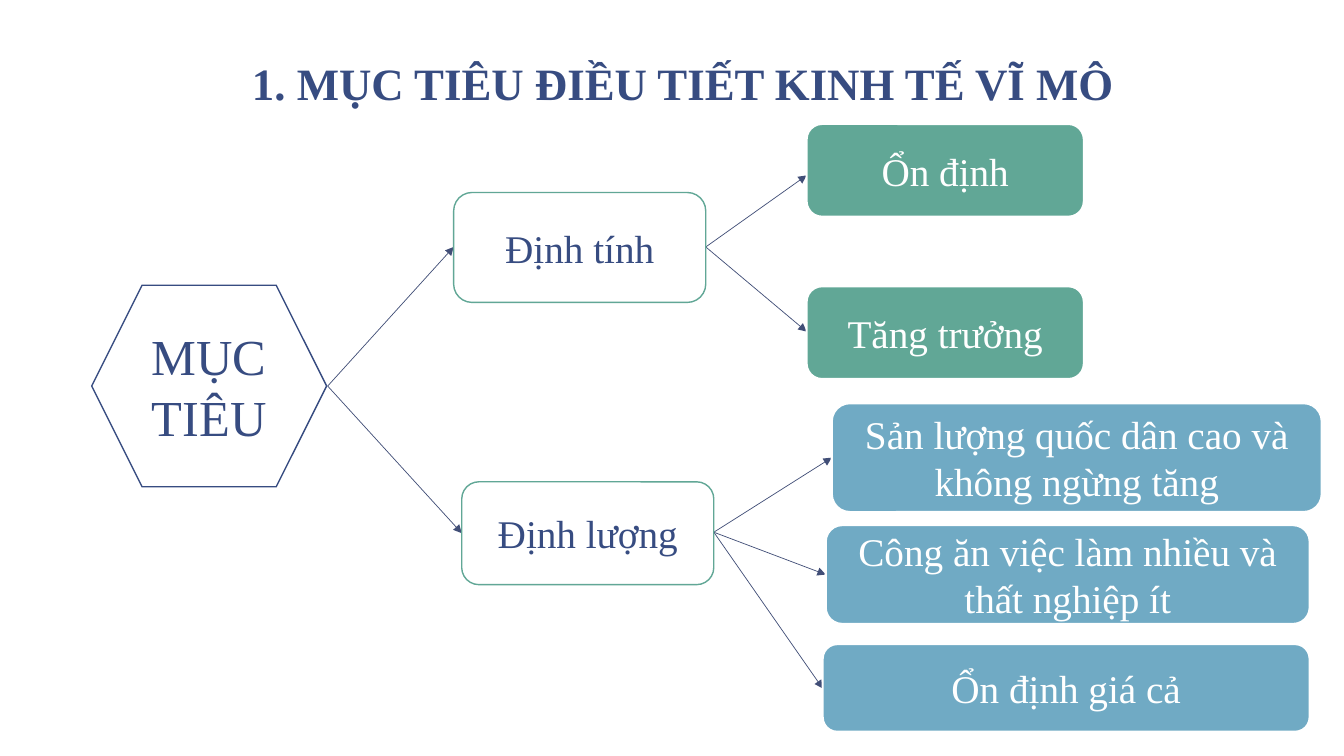
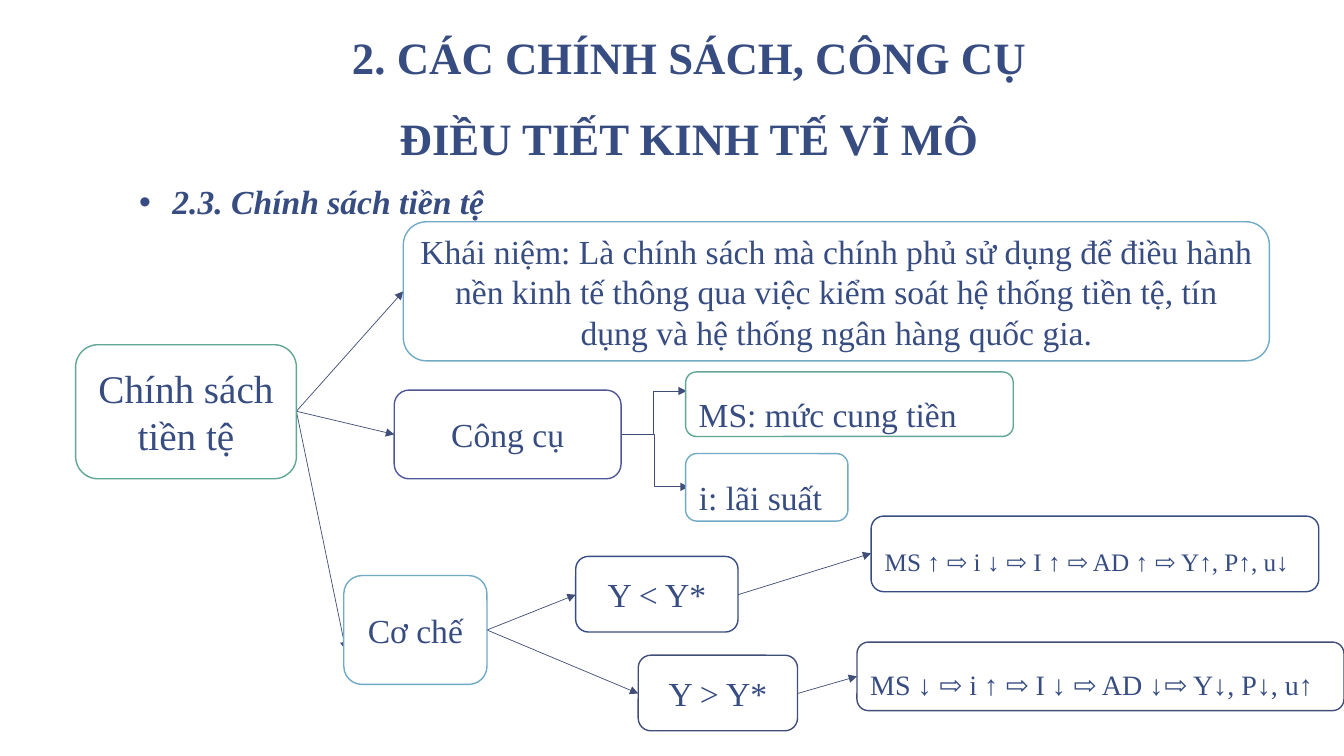
from lxml.etree import SubElement as Sub
from pptx import Presentation
from pptx.dml.color import RGBColor as RGB
from pptx.enum.shapes import MSO_CONNECTOR as Link, MSO_SHAPE as Form
from pptx.enum.text import MSO_ANCHOR as Anchor, PP_ALIGN as Align
from pptx.oxml.ns import qn
from pptx.util import Pt

PX = 9144
FONT = "Times New Roman"
NAVY = RGB(0x37, 0x4C, 0x81)
SLATE = RGB(0x41, 0x4E, 0x77)
INDIGO = RGB(0x4E, 0x57, 0x98)
GREEN = RGB(0x61, 0xA7, 0x96)
BLUE = RGB(0x70, 0xAA, 0xC4)
WHITE = RGB(0xFF, 0xFF, 0xFF)

HEX, ROUND = Form.HEXAGON, Form.ROUNDED_RECTANGLE
LINE, BENT = Link.STRAIGHT, Link.ELBOW
MID, LEFT = Align.CENTER, Align.LEFT


def write(shape, words, size, color=NAVY, align=MID, gap=1.0):
    frame = shape.text_frame
    frame.word_wrap = True
    frame.text = words
    para = frame.paragraphs[0]
    para.alignment = align
    para.line_spacing = gap
    for run in para.runs:
        run.font.name = FONT
        run.font.size = Pt(size)
        run.font.color.rgb = color
    return para


def label(slide, spot, words, size, align, gap, anchor):
    shape = slide.shapes.add_textbox(*[n * PX for n in spot])
    frame = shape.text_frame
    frame.margin_left = frame.margin_right = 13 * PX
    frame.margin_top = frame.margin_bottom = 7 * PX
    frame.vertical_anchor = anchor
    para = write(shape, words, size, NAVY, align, gap)
    for run in para.runs:
        run.font.bold = True
    return para


goals = {
    "title": "1. MỤC TIÊU ĐIỀU TIẾT KINH TẾ VĨ MÔ",
    "spot": (122, 8, 1111, 108),
    "gap": 0.85,
    "links": [
        (LINE, (325, 383), [(450, 245), (458, 529)]),
        (LINE, (700, 245), [(800, 174), (800, 329)]),
        (LINE, (708, 528), [(825, 454), (819, 570), (816, 683)]),
    ],
    "open": [
        (HEX, (91, 283, 233, 200), NAVY, "MỤC TIÊU", 36, MID),
        (ROUND, (450, 191, 250, 109), GREEN, "Định tính", 28, MID),
        (ROUND, (458, 478, 250, 102), GREEN, "Định lượng", 28, MID),
    ],
    "solid": [
        ((800, 123, 275, 92), GREEN, "Ổn định"),
        ((800, 284, 275, 92), GREEN, "Tăng trưởng"),
        ((825, 400, 486, 108), BLUE, "Sản lượng quốc dân cao và không ngừng tăng"),
        ((819, 521, 480, 98), BLUE, "Công ăn việc làm nhiều và thất nghiệp ít"),
        ((816, 639, 483, 87), BLUE, "Ổn định giá cả"),
    ],
}

money = {
    "title": "2. CÁC CHÍNH SÁCH, CÔNG CỤ\vĐIỀU TIẾT KINH TẾ VĨ MÔ",
    "spot": (128, 17, 1111, 153),
    "gap": 1.5,
    "links": [
        (LINE, (294, 408), [(400, 289), (391, 431), (343, 645)]),
        (BENT, (616, 431), [(683, 483), (681, 388)]),
        (LINE, (483, 625), [(571, 590), (633, 688)]),
        (LINE, (732, 590), [(864, 549)]),
        (LINE, (791, 688), [(850, 671)]),
    ],
    "open": [
        (ROUND, (75, 342, 219, 133), GREEN, "Chính sách tiền tệ", 28, MID),
        (ROUND, (400, 220, 859, 138), BLUE,
         "Khái niệm: Là chính sách mà chính phủ sử dụng để điều hành nền kinh tế "
         "thông qua việc kiểm soát hệ thống tiền tệ, tín dụng và hệ thống ngân hàng "
         "quốc gia.", 24, MID),
        (ROUND, (391, 387, 225, 88), INDIGO, "Công cụ", 24, MID),
        (ROUND, (680, 450, 161, 67), BLUE, "i: lãi suất", 24, LEFT),
        (ROUND, (680, 369, 325, 64), GREEN, "MS: mức cung tiền", 24, LEFT),
        (ROUND, (341, 571, 142, 108), BLUE, "Cơ chế", 24, MID),
        (ROUND, (571, 552, 161, 75), NAVY, "Y < Y*", 24, MID),
        (ROUND, (864, 512, 444, 75), NAVY,
         "MS ↑ ⇨ i ↓ ⇨ I ↑ ⇨ AD ↑ ⇨ Y↑, P↑, u↓", 18, LEFT),
        (ROUND, (633, 650, 158, 75), SLATE, "Y > Y*", 24, MID),
        (ROUND, (850, 637, 483, 68), SLATE,
         "MS ↓ ⇨ i ↑ ⇨ I ↓ ⇨ AD ↓⇨ Y↓, P↓, u↑", 20, LEFT),
    ],
    "solid": [],
}

deck = Presentation()
deck.slide_width, deck.slide_height = 1333 * PX, 750 * PX

for page in (goals, money):
    slide = deck.slides.add_slide(deck.slide_layouts[6])
    label(slide, page["spot"], page["title"], 32, MID, page["gap"], Anchor.BOTTOM)

    if page is money:
        para = label(slide, (125, 175, 1111, 50), "2.3. Chính sách tiền tệ",
                     24, LEFT, 0.95, Anchor.TOP)
        para.runs[0].font.italic = True
        props = para._p.get_or_add_pPr()
        props.set("marL", str(33 * PX))
        props.set("indent", str(-33 * PX))
        Sub(props, qn("a:buFont"), typeface="Arial")
        Sub(props, qn("a:buChar"), char="•")

    for kind, start, ends in page["links"]:
        for end in ends:
            arrow = slide.shapes.add_connector(kind, *[n * PX for n in start + end])
            arrow.line.color.rgb = SLATE
            arrow.line.width = Pt(0.5)
            Sub(arrow.line._get_or_add_ln(), qn("a:tailEnd"), type="triangle")
            Sub(arrow._element.spPr, qn("a:effectLst"))

    boxes = [(form, spot, WHITE, edge, 1, NAVY, words, size, align)
             for form, spot, edge, words, size, align in page["open"]]
    boxes += [(ROUND, spot, fill, WHITE, 1.5, WHITE, words, 28, MID)
              for spot, fill, words in page["solid"]]
    for form, spot, fill, edge, width, color, words, size, align in boxes:
        box = slide.shapes.add_shape(form, *[n * PX for n in spot])
        box.shadow.inherit = False
        box.fill.solid()
        box.fill.fore_color.rgb = fill
        box.line.color.rgb = edge
        box.line.width = Pt(width)
        write(box, words, size, color, align, 1.5 if align == LEFT else 1.0)

deck.save("out.pptx")
